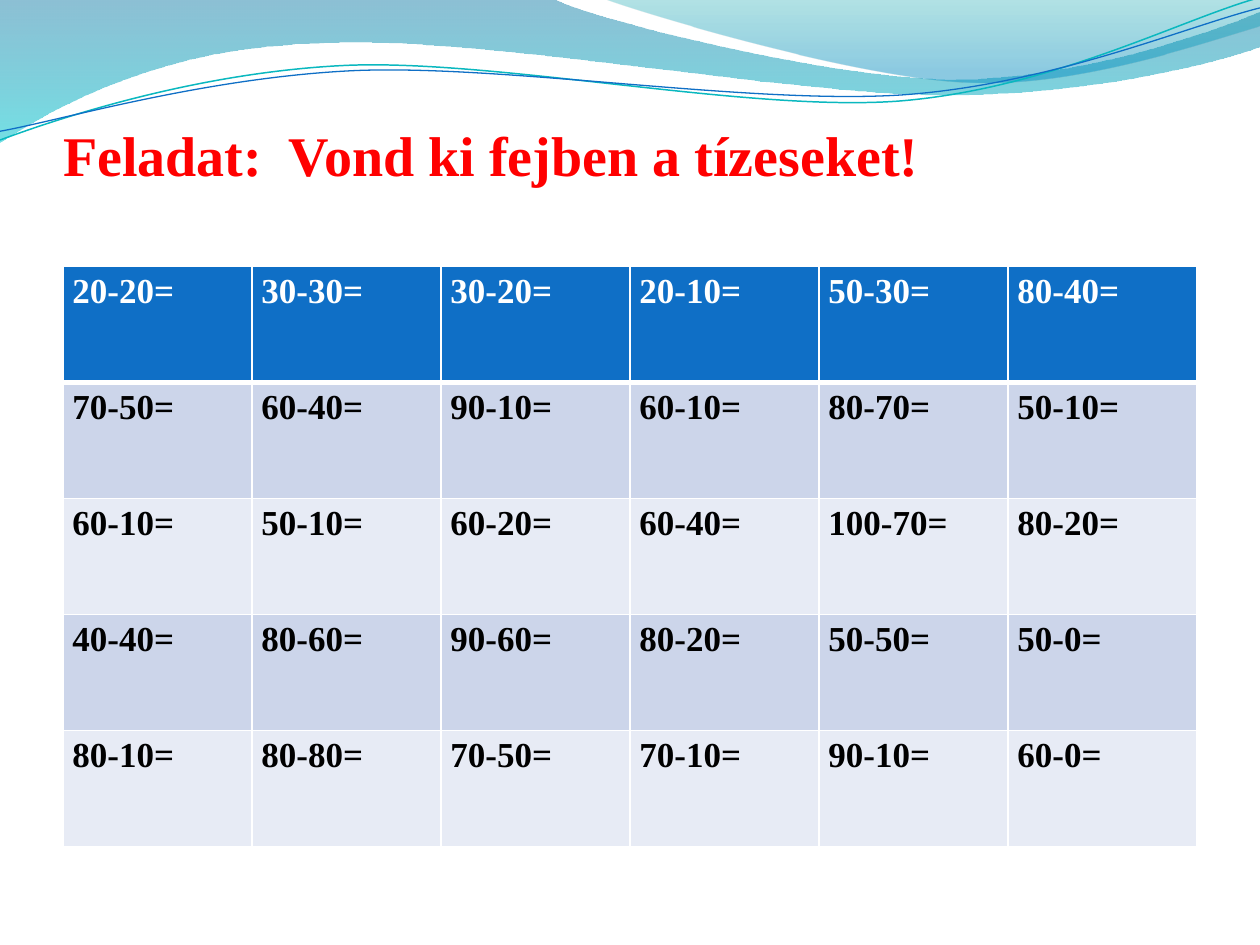
from dataclasses import dataclass

from lxml.etree import SubElement
from pptx import Presentation
from pptx.dml.color import RGBColor as RGB
from pptx.enum.text import MSO_ANCHOR as Anchor, MSO_AUTO_SIZE as AutoSize, PP_ALIGN as Align
from pptx.oxml.ns import qn
from pptx.util import Pt


@dataclass(frozen=True)
class Theme:
    font: str = "Times New Roman"
    title_size: int = 32
    cell_size: int = 20
    title: str = "FF0000"
    header: str = "0F6FC6"
    header_text: str = "FFFFFF"
    body_text: str = "000000"
    bands: tuple = ("CCD5EA", "E7EBF5")
    border: str = "FFFFFF"
    teal_line: str = "0AB8BF"
    # Gradient stops: position, colour, opacity in percent
    big_wave: tuple = ((0, "0074A1", 45), (100, "00C6CF", 55))
    small_wave: tuple = ((0, "00A1A9", 30), (80, "008BBF", 45))


# Outlines in points: one pair is a line end, three pairs are a Bézier curve
BIG_WAVE = [[(0, 0)], [(317, -0.5)], [(343, 12), (478, 45), (546, 45)],
            [(614, 45), (690, 19), (720, 6.4)], [(721, 26)],
            [(708, 32), (626, 55), (537, 54)], [(448, 54), (275, 20), (185, 24.4)],
            [(93, 26), (33, 60), (-0.5, 81.4)]]
SMALL_WAVE = [[(345, -0.5)], [(367, 8), (491, 45), (554, 47)],
              [(616, 50), (692, 23), (720, 15)], [(720, 0)]]
TEAL_CURVE = [[(0, 80)], [(35, 67), (114, 41), (199, 37.3)], [(285, 34), (427, 64), (513, 57.8)],
              [(600, 51), (675, 11), (719, -1.2)]]
BLUE_CURVE = [[(0, 75)], [(34, 69), (118, 44), (204, 40.3)], [(290, 37), (430, 60), (516, 54.2)],
              [(602, 48), (678, 15), (720, 4.5)]]

TASKS = [
    ["20-20=", "30-30=", "30-20=", "20-10=", "50-30=", "80-40="],
    ["70-50=", "60-40=", "90-10=", "60-10=", "80-70=", "50-10="],
    ["60-10=", "50-10=", "60-20=", "60-40=", "100-70=", "80-20="],
    ["40-40=", "80-60=", "90-60=", "80-20=", "50-50=", "50-0="],
    ["80-10=", "80-80=", "70-50=", "70-10=", "90-10=", "60-0="],
]


class SlideBuilder:
    def __init__(self, slide, theme):
        self.s = slide
        self.theme = theme

    def freeform(self, outline, close):
        """Build the control polygon, then join each three lines into a curve."""
        points = [(Pt(x), Pt(y)) for part in outline for x, y in part]
        builder = self.s.shapes.build_freeform(*points[0])
        builder.add_line_segments(points[1:], close=close)
        sp = builder.convert_to_shape()
        sp.shadow.inherit = False
        lines = iter(list(sp._element.iter(qn("a:lnTo"))))
        for part in outline[1:]:
            first, *others = [next(lines) for _ in part]
            if others:
                first.tag = qn("a:cubicBezTo")
            for line in others:
                first.append(line[0])
                line.getparent().remove(line)
        return sp

    def wave(self, outline, stops):
        sp = self.freeform(outline, True)
        sp.line.fill.background()
        sp.fill.gradient()
        sp.fill.gradient_angle = 270
        for stop, (position, color, _) in zip(sp.fill.gradient_stops, stops):
            stop.position = position / 100
            stop.color.rgb = RGB.from_string(color)
        for clr, (_, _, opacity) in zip(sp._element.spPr.iter(qn("a:srgbClr")), stops):
            SubElement(clr, qn("a:alpha"), val=str(opacity * 1000))

    def curve(self, outline, color, width):
        sp = self.freeform(outline, False)
        sp.fill.background()
        sp.line.color.rgb = RGB.from_string(color)
        sp.line.width = Pt(width)

    def format_text(self, p, size, color):
        p.alignment = Align.LEFT
        for r in p.runs:
            r.font.name = self.theme.font
            r.font.size = Pt(size)
            r.font.bold = True
            r.font.color.rgb = RGB.from_string(color)

    def title(self, text, left, top, width, height, gap_below):
        sp = self.s.shapes.title
        sp.left, sp.top, sp.width, sp.height = Pt(left), Pt(top), Pt(width), Pt(height)
        tf = sp.text_frame
        tf.text = text
        tf.word_wrap = True
        tf.auto_size = AutoSize.NONE
        tf.vertical_anchor = Anchor.BOTTOM
        tf.margin_left = tf.margin_right = 0
        tf.margin_top, tf.margin_bottom = Pt(3.6), Pt(gap_below)
        self.format_text(tf.paragraphs[0], self.theme.title_size, self.theme.title)
        self.s.shapes._spTree.append(sp._element)  # in front of the waves

    def borders(self, cell, **widths):
        tcPr = cell._tc.get_or_add_tcPr()
        for side in "LRTB":
            ln = SubElement(tcPr, qn(f"a:ln{side}"), w=str(Pt(widths.get(side, 1))))
            fill = SubElement(ln, qn("a:solidFill"))
            SubElement(fill, qn("a:srgbClr"), val=self.theme.border)

    def table(self, rows, left, top, col_width, row_height):
        th = self.theme
        n_rows, n_cols = len(rows), len(rows[0])
        table = self.s.shapes.add_table(n_rows, n_cols, Pt(left), Pt(top),
                                        Pt(col_width * n_cols), Pt(row_height * n_rows)).table
        table.horz_banding = False
        for i, row in enumerate(rows):
            table.rows[i].height = Pt(row_height)
            header = i == 0
            rule = {0: {"B": 3}, 1: {"T": 3}}.get(i, {})
            color = th.header if header else th.bands[(i - 1) % 2]
            for j, text in enumerate(row):
                cell = table.cell(i, j)
                cell.margin_left = cell.margin_right = Pt(5.4)
                cell.margin_top = cell.margin_bottom = 0
                self.borders(cell, **rule)
                cell.fill.solid()
                cell.fill.fore_color.rgb = RGB.from_string(color)
                p = cell.text_frame.paragraphs[0]
                p.text = text
                p.line_spacing = 1.15
                self.format_text(p, th.cell_size, th.header_text if header else th.body_text)


def main():
    prs = Presentation()
    prs.slide_width, prs.slide_height = Pt(720), Pt(540)
    theme = Theme()
    b = SlideBuilder(prs.slides.add_slide(prs.slide_layouts[5]), theme)
    b.wave(BIG_WAVE, theme.big_wave)
    b.wave(SMALL_WAVE, theme.small_wave)
    b.curve(TEAL_CURVE, theme.teal_line, 0.85)
    b.curve(BLUE_CURVE, theme.header, 0.75)
    b.title("Feladat:  Vond ki fejben a tízeseket!", 36, 55.5, 648, 90, gap_below=38.1)
    b.table(TASKS, 36, 152.3, col_width=108, row_height=66.3)
    prs.save("out.pptx")


if __name__ == "__main__":
    main()
